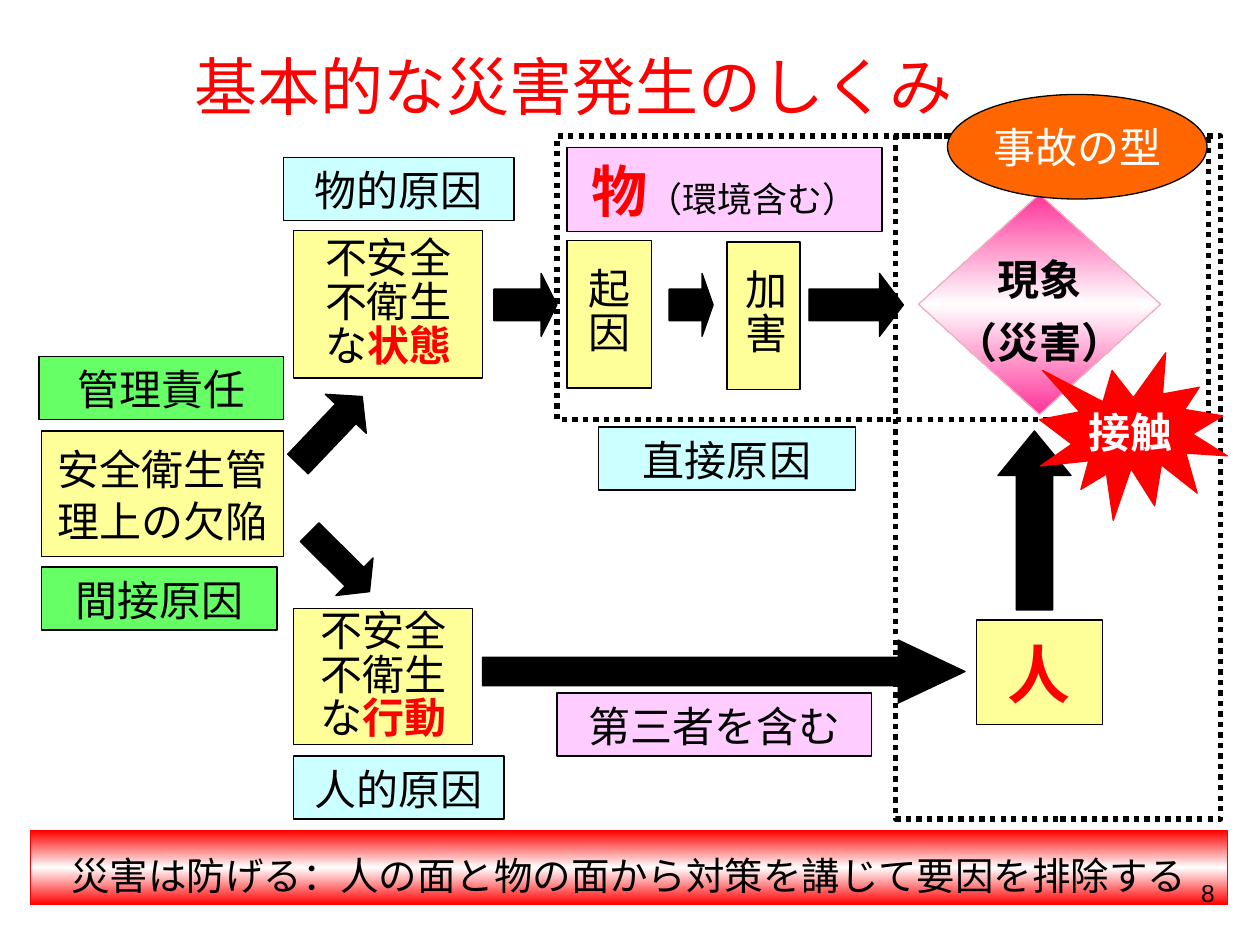
from copy import deepcopy

from lxml import etree
from pptx import Presentation
from pptx.dml.color import RGBColor
from pptx.enum.dml import MSO_LINE
from pptx.enum.shapes import MSO_SHAPE
from pptx.enum.text import MSO_ANCHOR, MSO_AUTO_SIZE, PP_ALIGN
from pptx.oxml.ns import qn
from pptx.util import Inches, Pt

RECTANGLE = MSO_SHAPE.RECTANGLE
RIGHT_ARROW = MSO_SHAPE.RIGHT_ARROW
UP_ARROW = MSO_SHAPE.UP_ARROW
DIAMOND = MSO_SHAPE.FLOWCHART_DECISION
ELLIPSE = MSO_SHAPE.OVAL
BURST = MSO_SHAPE.EXPLOSION1
DOTTED = MSO_LINE.ROUND_DOT
CENTER, RIGHT = PP_ALIGN.CENTER, PP_ALIGN.RIGHT
TOP, MIDDLE = MSO_ANCHOR.TOP, MSO_ANCHOR.MIDDLE
GROW = MSO_AUTO_SIZE.SHAPE_TO_FIT_TEXT

JAPANESE_FONT = "Noto Sans CJK JP"
BLACK, WHITE, RED = "000000", "FFFFFF", "FF0000"
YELLOW, GREEN, CYAN, PINK = "FFFF99", "66FF66", "CCFFFF", "FFCCFF"
EMPHASIS = {"color": RED, "bold": True}

# text, position, fill
LABELS = [
    ("管理責任", (0.31, 2.83, 1.94, 0.5), GREEN),
    ("間接原因", (0.33, 4.5, 1.87, 0.5), GREEN),
    ("人的原因", (2.33, 6, 1.67, 0.5), CYAN),
    ("物的原因", (2.25, 1.25, 1.83, 0.5), CYAN),
    ("直接原因", (4.75, 3.39, 2.04, 0.5), CYAN),
    ("第三者を含む", (4.42, 5.5, 2.5, 0.5), PINK),
]

# shape, position, adjustments, rotation
ARROWS = [
    (RIGHT_ARROW, (2.25, 3.19, 0.74, 0.45), (0.5, 0.42), 313.6),
    (RIGHT_ARROW, (2.36, 4.25, 0.67, 0.42), (0.5, 0.4), 44.8),
    (RIGHT_ARROW, (3.92, 2.17, 0.5, 0.5), (0.5, 0.25), 0),
    (RIGHT_ARROW, (5.31, 2.17, 0.35, 0.5), (0.5, 0.25), 0),
    (RIGHT_ARROW, (6.42, 2.17, 0.75, 0.5), (0.5, 0.38), 0),
    (RIGHT_ARROW, (3.83, 5.08, 3.83, 0.5), (0.45, 1.06), 0),
    (UP_ARROW, (7.92, 3.42, 0.58, 1.42), (0.5, 0.61), 0),
]

FRAMES = [(4.42, 1.08, 5.17, 2.25), (7.11, 1.08, 2.58, 5.42)]


def rgb(color):
    return RGBColor.from_string(color)


def set_gradient(shape, edge, middle):
    """Fill from top to bottom with edge, middle and edge colours."""
    shape.fill.gradient()
    shape.fill.gradient_angle = 270
    stop_list = shape._element.spPr.find(qn("a:gradFill")).find(qn("a:gsLst"))
    stop_list.append(deepcopy(stop_list[-1]))
    for stop, position, color in zip(shape.fill.gradient_stops, (0, 0.5, 1), (edge, middle, edge)):
        stop.position = position
        stop.color.rgb = rgb(color)


def add_shape(slide, kind, position, fill=None, line=BLACK, width=0.75, dash=None):
    shape = slide.shapes.add_shape(kind, *map(Inches, position))
    shape.shadow.inherit = False
    if fill is None:
        shape.fill.background()
    elif isinstance(fill, tuple):
        set_gradient(shape, *fill)
    else:
        shape.fill.solid()
        shape.fill.fore_color.rgb = rgb(fill)
    shape.line.color.rgb = rgb(line)
    shape.line.width = Pt(width)
    if dash:
        shape.line.dash_style = dash
    return shape


def add_run(paragraph, text, size=24, color=BLACK, bold=False, font=JAPANESE_FONT):
    run = paragraph.add_run()
    run.text = text
    for name, value in {"name": font, "size": Pt(size), "bold": bold}.items():
        setattr(run.font, name, value)
    run.font.color.rgb = rgb(color)
    etree.SubElement(run.font._element, qn("a:ea"), typeface=font)


def write(shape, lines, align=CENTER, spacing=None, gap=None, anchor=MIDDLE,
          wrap=False, auto_size=None, **run_format):
    """Write lines, each a string or a list of (text, run format) pairs."""
    frame = shape.text_frame
    frame_format = {"word_wrap": wrap, "vertical_anchor": anchor, "auto_size": auto_size}
    for name, value in frame_format.items():
        setattr(frame, name, value)
    for index, line in enumerate(lines):
        paragraph = frame.add_paragraph() if index else frame.paragraphs[0]
        paragraph_format = {"alignment": align, "line_spacing": spacing,
                            "space_before": gap if index else None}
        for name, value in paragraph_format.items():
            setattr(paragraph, name, value)
        runs = [(line, {})] if isinstance(line, str) else line
        for text, changes in runs:
            add_run(paragraph, text, **{**run_format, **changes})


def add_box(slide, position, fill, lines, kind=RECTANGLE, line=BLACK, **text_format):
    write(add_shape(slide, kind, position, fill, line), lines, **text_format)


def add_text(slide, position, text, **text_format):
    box = slide.shapes.add_textbox(*map(Inches, position))
    write(box, [text], anchor=TOP, wrap=True, **text_format)


def add_arrow(slide, kind, position, adjustments, rotation):
    arrow = add_shape(slide, kind, position, BLACK)
    for index, value in enumerate(adjustments):
        arrow.adjustments[index] = value
    arrow.rotation = rotation


def add_causes(slide):
    add_box(slide, (0.33, 3.42, 1.92, 1), YELLOW, ["安全衛生管", "理上の欠陥"], spacing=Pt(30))
    for position, outcome in [((2.33, 1.83, 1.5, 1.17), "状態"), ((2.33, 4.83, 1.42, 1.08), "行動")]:
        lines = ["不安全", "不衛生", [("な", {}), (outcome, EMPHASIS)]]
        add_box(slide, position, YELLOW, lines, spacing=Pt(25))
    for position, characters, align in [((4.5, 1.91, 0.67, 1.17), "起因", CENTER),
                                        ((5.77, 1.92, 0.58, 1.17), "加害", RIGHT)]:
        add_box(slide, position, YELLOW, list(characters), align=align, spacing=0.8, gap=Pt(2.4))
    add_box(slide, (7.75, 4.92, 1, 0.83), YELLOW, ["人"], spacing=Pt(45), size=36, **EMPHASIS)


def main():
    presentation = Presentation()
    presentation.slide_width, presentation.slide_height = Inches(10), Inches(7.5)
    slide = presentation.slides.add_slide(presentation.slide_layouts[6])

    add_causes(slide)
    add_box(slide, (7.29, 1.54, 1.92, 1.75), ("FF3399", WHITE), ["現象", "（災害）"],
            kind=DIAMOND, line="ECB2C0", spacing=Pt(36), bold=True)
    for arrow in ARROWS:
        add_arrow(slide, *arrow)
    for position in FRAMES:
        add_shape(slide, RECTANGLE, position, width=3, dash=DOTTED)
    for text, position, fill in LABELS:
        add_box(slide, position, fill, [text], spacing=Pt(30))
    add_box(slide, (4.5, 1.17, 2.5, 0.67), PINK,
            [[("物", {"size": 32, **EMPHASIS}), ("（環境含む）", {"size": 20})]])

    add_text(slide, (1.33, 0.33, 6.33, 0.7), "基本的な災害発生のしくみ",
             align=RIGHT, auto_size=GROW, size=36, color=RED)
    add_box(slide, (0.24, 6.59, 9.5, 0.59), (RED, WHITE),
            ["災害は防げる：人の面と物の面から対策を講じて要因を排除する"], line=RED,
            spacing=Pt(35), anchor=TOP, wrap=True, auto_size=GROW, size=22)
    add_box(slide, (7.52, 0.75, 2.06, 0.83), "FF6600", ["事故の型"], kind=ELLIPSE, color=WHITE)
    add_text(slide, (7.32, 6.92, 2.42, 0.23), "8", align=RIGHT, size=14, font="Arial")
    add_box(slide, (8.25, 2.8, 1.49, 1.33), RED, ["接触"], kind=BURST, line=RED,
            align=RIGHT, color=WHITE, bold=True)

    presentation.save("out.pptx")


if __name__ == "__main__":
    main()
